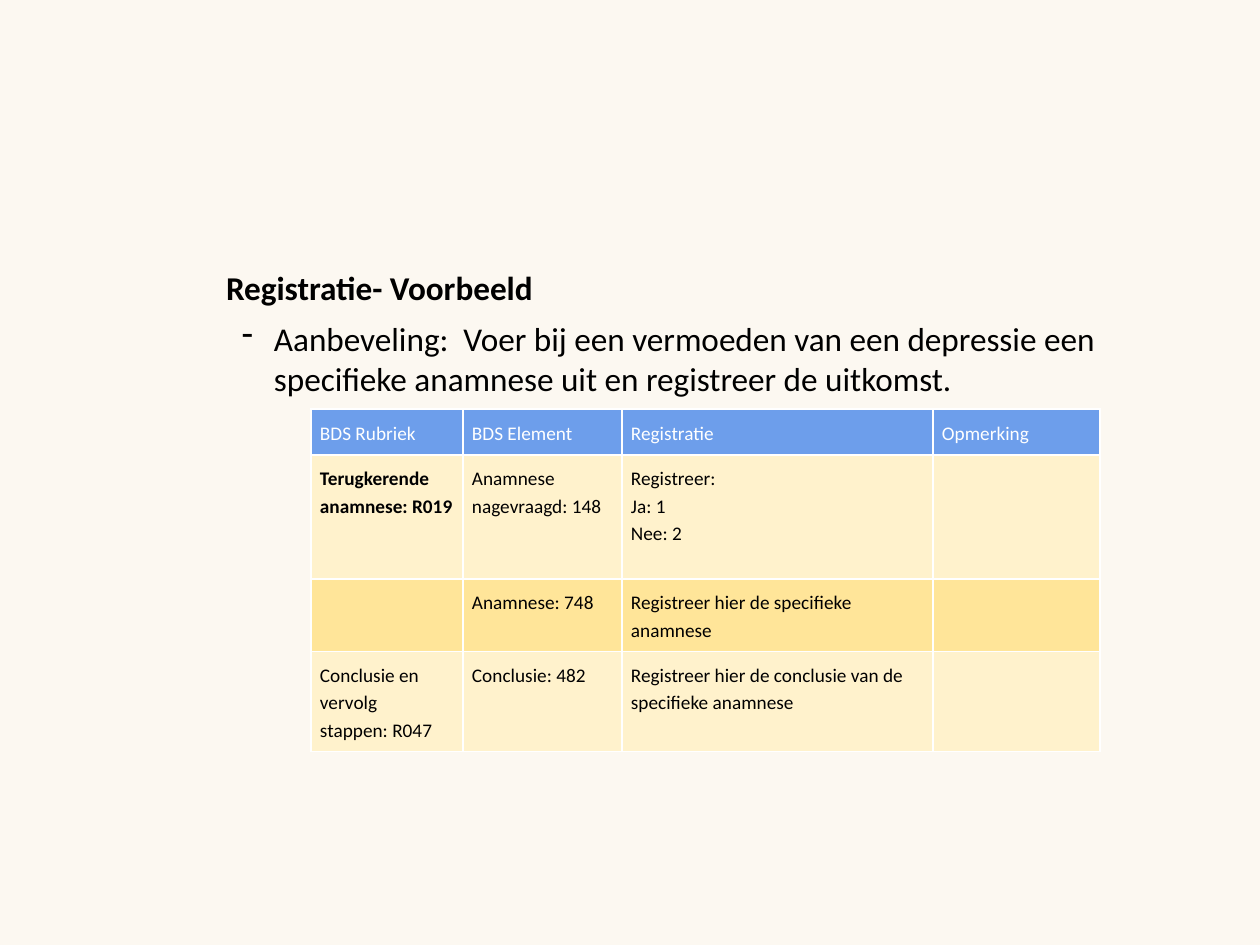
from lxml.etree import SubElement
from pptx import Presentation
from pptx.dml.color import RGBColor
from pptx.enum.text import MSO_ANCHOR, MSO_AUTO_SIZE, PP_ALIGN
from pptx.oxml.ns import qn
from pptx.util import Emu, Pt

PX_PER_INCH = 126
COLORS = {
    "background": "FCF8F1",
    "text": "000000",
    "white": "FFFFFF",
    "header": "6D9EEB",
    "light": "FFF2CC",
    "dark": "FFE599",
}
COLUMN_WIDTHS = [152, 159, 311, 167]
ROW_HEIGHTS = [46, 124, 72, 99]
ROW_FILLS = ["header", "light", "dark", "light"]
# "\n" starts a paragraph, "\v" breaks a line
ROWS = [
    ["BDS Rubriek", "BDS Element", "Registratie", "Opmerking"],
    ["Terugkerende anamnese: R019", "Anamnese nagevraagd: 148",
     "Registreer:\nJa: 1\vNee: 2", ""],
    ["", "Anamnese: 748", "Registreer hier de specifieke\vanamnese", ""],
    ["Conclusie en vervolg\vstappen: R047", "Conclusie: 482",
     "Registreer hier de conclusie van de specifieke anamnese", ""],
]
BOLD_CELL = (1, 0)


def px(length):
    return Emu(round(length * 914400 / PX_PER_INCH))


def rgb(name):
    return RGBColor.from_string(COLORS[name])


class SlideBuilder:
    """Holds the type style and the slide being filled."""

    font_name = "Calibri"
    text_size = 19
    cell_size = 11
    text_margin = 13
    cell_margin = 9
    line_spacing = 1.15

    def __init__(self, presentation):
        self.slide = presentation.slides.add_slide(presentation.slide_layouts[5])
        fill = self.slide.background.fill
        fill.solid()
        fill.fore_color.rgb = rgb("background")

    def place(self, shape, left, top, width, height):
        shape.left, shape.top = px(left), px(top)
        shape.width, shape.height = px(width), px(height)

    def set_margins(self, target, margin):
        target.margin_left = target.margin_right = px(margin)
        target.margin_top = target.margin_bottom = px(margin)

    def set_frame(self, text_frame):
        text_frame.word_wrap = True
        text_frame.auto_size = MSO_AUTO_SIZE.NONE
        text_frame.vertical_anchor = MSO_ANCHOR.TOP
        self.set_margins(text_frame, self.text_margin)

    def format_paragraph(self, paragraph, size, color="text", bold=False, spacing=None):
        paragraph.alignment = PP_ALIGN.LEFT
        paragraph.line_spacing = spacing
        for run in paragraph.runs:
            run.font.name = self.font_name
            run.font.size = Pt(size)
            run.font.bold = bold
            run.font.color.rgb = rgb(color)

    def title(self, text, *box):
        shape = self.slide.shapes.title
        self.place(shape, *box)
        self.set_frame(shape.text_frame)
        shape.text_frame.text = text
        self.format_paragraph(shape.text_frame.paragraphs[0], self.text_size,
                              bold=True, spacing=self.line_spacing)

    def bullet(self, text, *box, indent, hanging):
        shape = self.slide.shapes.add_textbox(*map(px, box))
        self.set_frame(shape.text_frame)
        shape.text_frame.text = text
        paragraph = shape.text_frame.paragraphs[0]
        properties = paragraph._p.get_or_add_pPr()
        properties.set("marL", str(px(indent)))
        properties.set("indent", str(px(-hanging)))
        bullet_color = SubElement(properties, qn("a:buClr"))
        SubElement(bullet_color, qn("a:srgbClr"), val=COLORS["text"])
        SubElement(properties, qn("a:buChar"), char="-")
        self.format_paragraph(paragraph, self.text_size)

    def table(self, left, top):
        frame = self.slide.shapes.add_table(
            len(ROWS), len(COLUMN_WIDTHS), px(left), px(top),
            px(sum(COLUMN_WIDTHS)), px(sum(ROW_HEIGHTS)))
        table = frame.table
        for column, width in zip(table.columns, COLUMN_WIDTHS):
            column.width = px(width)
        for row_index, (row, height) in enumerate(zip(table.rows, ROW_HEIGHTS)):
            row.height = px(height)
            for column_index, cell in enumerate(row.cells):
                self.cell(cell, ROWS[row_index][column_index], ROW_FILLS[row_index],
                          bold=(row_index, column_index) == BOLD_CELL)

    def cell(self, cell, text, fill, bold):
        self.set_margins(cell, self.cell_margin)
        cell.vertical_anchor = MSO_ANCHOR.TOP
        self.cell_borders(cell)
        cell.fill.solid()
        cell.fill.fore_color.rgb = rgb(fill)
        cell.text_frame.text = text
        color = "white" if fill == "header" else "text"
        for paragraph in cell.text_frame.paragraphs:
            self.format_paragraph(paragraph, self.cell_size, color, bold,
                                  self.line_spacing)

    def cell_borders(self, cell):
        properties = cell._tc.get_or_add_tcPr()
        for side in ("a:lnL", "a:lnR", "a:lnT", "a:lnB"):
            line = SubElement(properties, qn(side), w=str(Pt(1)))
            line_fill = SubElement(line, qn("a:solidFill"))
            SubElement(line_fill, qn("a:srgbClr"), val=COLORS["white"])


def main():
    presentation = Presentation()
    presentation.slide_width, presentation.slide_height = px(1260), px(945)
    builder = SlideBuilder(presentation)
    builder.title("Registratie- Voorbeeld", 213, 248, 984, 57)
    builder.table(311, 409)
    builder.bullet(
        "Aanbeveling:  Voer bij een vermoeden van een depressie een "
        "specifieke anamnese uit en registreer de uitkomst.",
        213, 305, 984, 546, indent=48, hanging=32)
    presentation.save("out.pptx")


if __name__ == "__main__":
    main()
